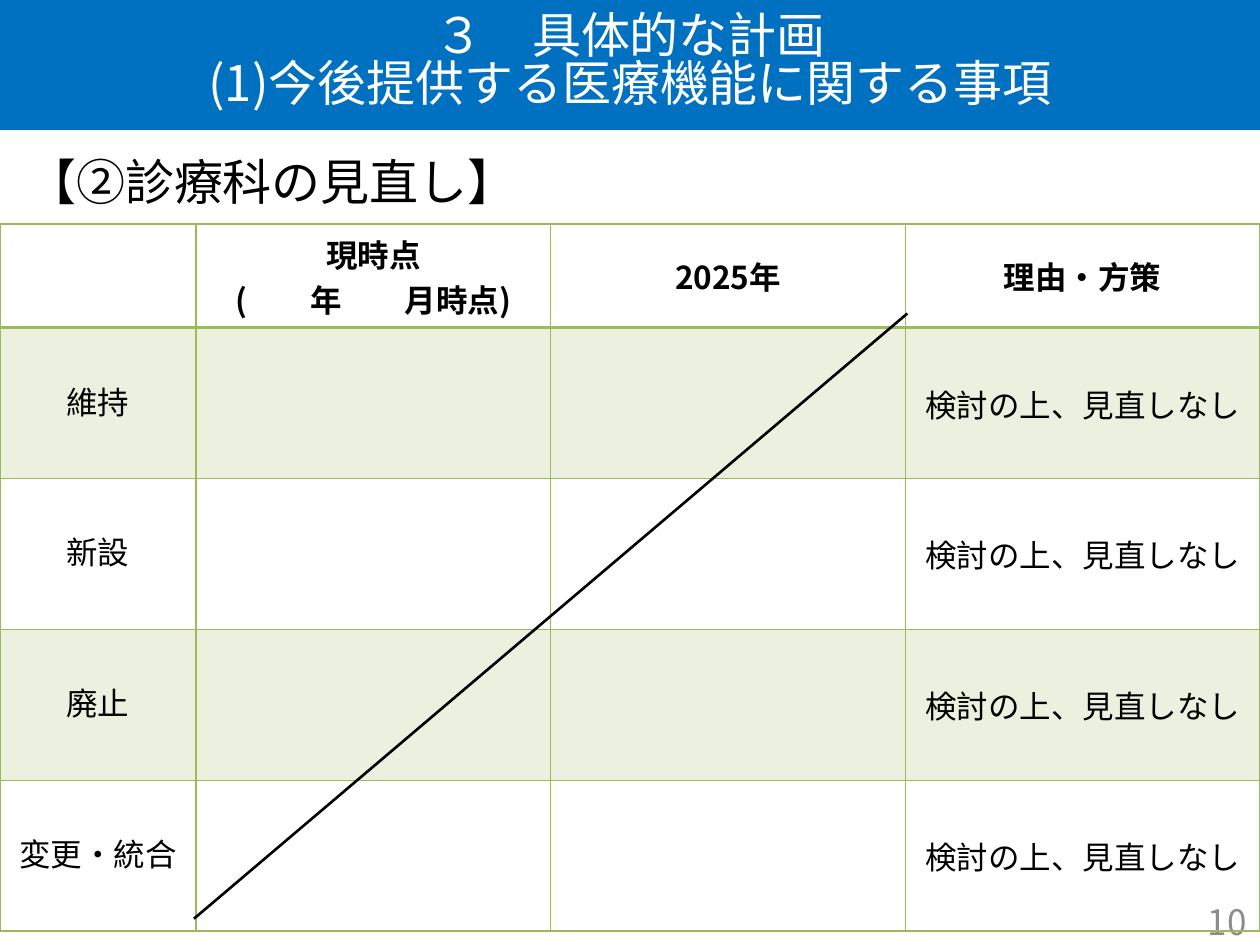
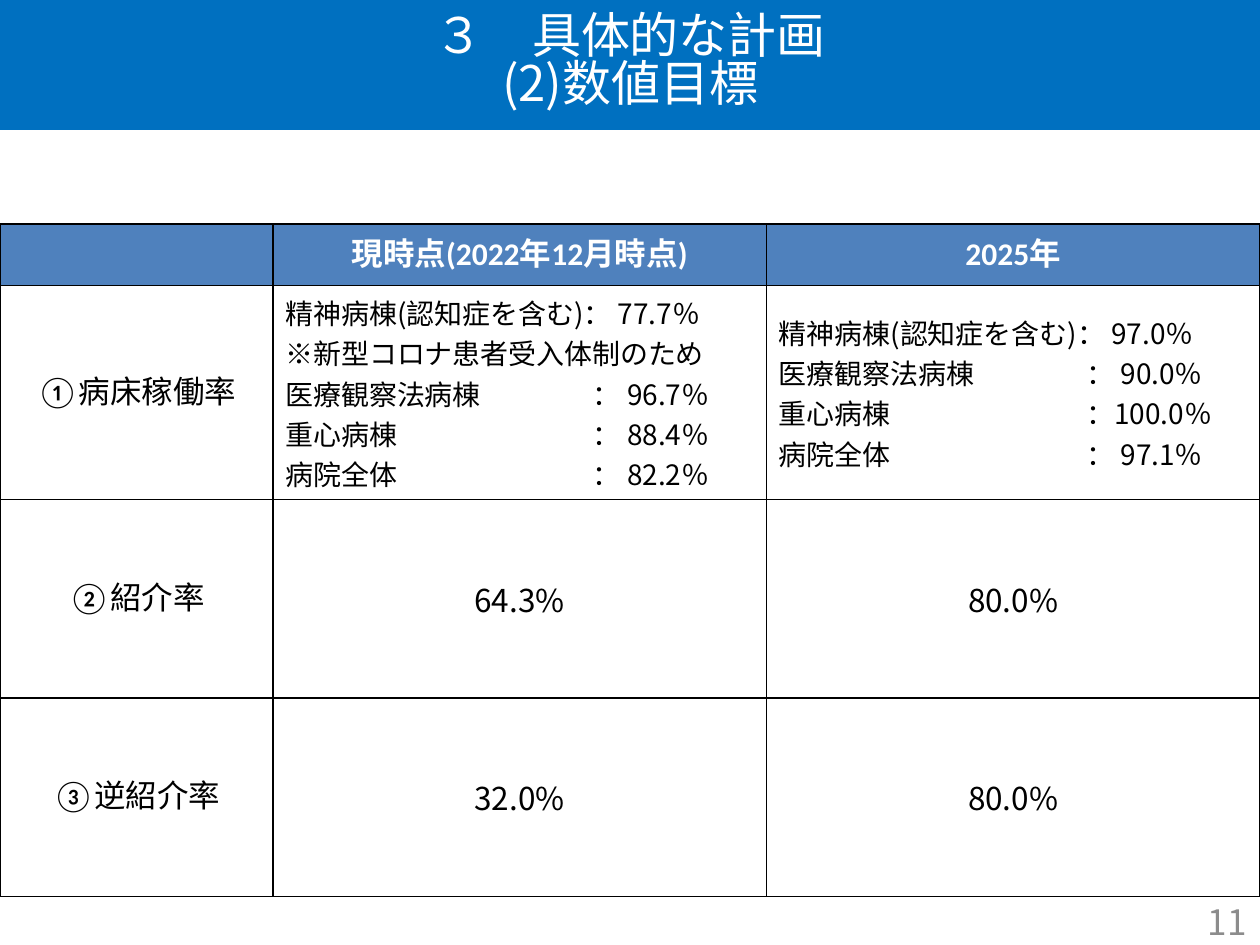
"""Build two hospital planning slides with a shared title band, tables and page numbers."""
import dataclasses

import pptx
import pptx.dml.color
import pptx.enum.shapes
import pptx.enum.text
import pptx.oxml.ns
import pptx.util
from lxml import etree

Cm = pptx.util.Cm
Pt = pptx.util.Pt
Align = pptx.enum.text.PP_ALIGN
MIDDLE = pptx.enum.text.MSO_ANCHOR.MIDDLE
qn = pptx.oxml.ns.qn


@dataclasses.dataclass(frozen=True)
class Theme:
    band: str = "0070C0"
    header: str = "4F81BD"
    green: str = "9BBB59"
    pale_green: str = "EBF1DE"
    black: str = "000000"
    white: str = "FFFFFF"
    grey: str = "8C8C8C"
    heading_size: int = 28
    number_size: int = 20
    body_size: int = 18
    detail_size: int = 16
    main_font: str = "Noto Sans CJK JP"
    label_font: str = "Calibri"
    page_width: float = 25.4
    page_height: float = 19.05
    table_top: float = 4.52
    tab_stop: float = 6.2


THEME = Theme()


def rgb(colour):
    return pptx.dml.color.RGBColor.from_string(colour)


def write(frame, text, size=THEME.body_size, colour=THEME.black, font=THEME.main_font,
          bold=False, align=Align.LEFT, spacing=None):
    for index, line in enumerate(text.split("\n")):
        para = frame.add_paragraph() if index else frame.paragraphs[0]
        para.text = line
        para.alignment = align
        if spacing:
            para.line_spacing = spacing
        if "\t" in line:
            stops = etree.SubElement(para._p.get_or_add_pPr(), qn("a:tabLst"))
            etree.SubElement(stops, qn("a:tab"), pos=str(Cm(THEME.tab_stop)), algn="l")
        for span in para.runs:
            span.font.size = Pt(size)
            span.font.bold = bold
            span.font.color.rgb = rgb(colour)
            span.font.name = font
            etree.SubElement(span._r.get_or_add_rPr(), qn("a:ea"), typeface=font)


def set_borders(cell, colour, bottom=1, top=1):
    properties = cell._tc.get_or_add_tcPr()
    widths = {"lnL": 1, "lnR": 1, "lnT": top, "lnB": bottom}
    for index, (side, width) in enumerate(widths.items()):
        border = etree.Element(qn(f"a:{side}"), w=str(Pt(width)))
        fill = etree.SubElement(border, qn("a:solidFill"))
        etree.SubElement(fill, qn("a:srgbClr"), val=colour)
        properties.insert(index, border)


class Builder:
    def __init__(self, theme):
        self.theme = theme
        self.deck = pptx.Presentation()
        self.deck.slide_width = Cm(theme.page_width)
        self.deck.slide_height = Cm(theme.page_height)
        self.page = None

    def add_page(self, title, number):
        self.page = self.deck.slides.add_slide(self.deck.slide_layouts[6])
        self.band(title)
        self.text_box(number, 19.46, 18.06, 5.92, 1.02, size=self.theme.number_size,
                      colour=self.theme.grey, align=Align.RIGHT)

    def band(self, title):
        box = self.page.shapes.add_shape(
            pptx.enum.shapes.MSO_SHAPE.RECTANGLE, 0, Cm(-0.08), Cm(self.theme.page_width), Cm(2.7))
        box.shadow.inherit = False
        box.fill.solid()
        box.fill.fore_color.rgb = rgb(self.theme.band)
        box.line.fill.background()
        box.text_frame.word_wrap = True
        box.text_frame.vertical_anchor = MIDDLE
        write(box.text_frame, title, size=self.theme.heading_size, colour=self.theme.white,
              align=Align.CENTER, spacing=0.82)

    def text_box(self, text, left, top, width, height, **style):
        box = self.page.shapes.add_textbox(Cm(left), Cm(top), Cm(width), Cm(height))
        box.text_frame.word_wrap = True
        box.text_frame.vertical_anchor = MIDDLE
        write(box.text_frame, text, **style)

    def line(self, start, end, colour, width):
        line = self.page.shapes.add_connector(
            pptx.enum.shapes.MSO_CONNECTOR.STRAIGHT, *map(Cm, start + end))
        line.line.color.rgb = rgb(colour)
        line.line.width = Pt(width)
        etree.SubElement(line._element.spPr, qn("a:effectLst"))

    def table(self, rows, widths, heights, border, header_style, header_fill=None,
              band_fill=None, header_rule=1):
        table = self.page.shapes.add_table(
            len(rows), len(widths), 0, Cm(self.theme.table_top),
            Cm(sum(widths)), Cm(sum(heights))).table
        table.first_row = table.horz_banding = False
        for column, width in zip(table.columns, widths):
            column.width = Cm(width)
        for index, (texts, height) in enumerate(zip(rows, heights)):
            table.rows[index].height = Cm(height)
            fill = header_fill if index == 0 else band_fill if index % 2 else None
            for column, text in enumerate(texts):
                cell = table.cell(index, column)
                cell.vertical_anchor = MIDDLE
                if fill:
                    cell.fill.solid()
                    cell.fill.fore_color.rgb = rgb(fill)
                else:
                    cell.fill.background()
                set_borders(cell, border, bottom=header_rule if index == 0 else 1,
                            top=header_rule if index == 1 else 1)
                write(cell.text_frame, text, **self.cell_style(index, column, text, header_style))

    def cell_style(self, row, column, text, header_style):
        if row == 0:
            return {"bold": True, "align": Align.CENTER, **header_style}
        if column == 0:
            return {"font": self.theme.label_font, "align": Align.CENTER}
        if "\n" in text:
            return {"size": self.theme.detail_size}
        return {"align": Align.CENTER}


def add_department_review(builder):
    theme = builder.theme
    builder.add_page("３　具体的な計画\v(1)今後提供する医療機能に関する事項", "10")
    header = ["", "現時点\n(　　年　　月時点)", "2025年", "理由・方策"]
    reviews = [[review, "", "", "検討の上、見直しなし"]
               for review in ("維持", "新設", "廃止", "変更・統合")]
    builder.table([header] + reviews, [3.95] + [7.15] * 3, [2.09] + [3.04] * 4, theme.green,
                  header_style={}, band_fill=theme.pale_green, header_rule=2)
    builder.text_box("【②診療科の見直し】", 0.3, 2.92, 24.8, 1.45, size=theme.heading_size)
    builder.line((18.29, 6.32), (3.91, 18.52), theme.black, 1.5)


def add_numeric_targets(builder):
    theme = builder.theme
    builder.add_page("３　具体的な計画\v(2)数値目標", "11")
    current = ("精神病棟(認知症を含む)： 77.7％\n※新型コロナ患者受入体制のため\n"
               "医療観察法病棟\t： 96.7％\n重心病棟\t： 88.4％\n病院全体\t： 82.2％")
    target = ("精神病棟(認知症を含む)： 97.0％\n医療観察法病棟\t： 90.0％\n"
              "重心病棟\t：100.0％\n病院全体\t： 97.1％")
    rows = [["", "現時点(2022年12月時点)", "2025年"],
            ["①病床稼働率", current, target],
            ["②紹介率", "64.3%", "80.0%"],
            ["③逆紹介率", "32.0%", "80.0%"]]
    builder.table(rows, [5.5, 9.95, 9.95], [1.24, 4.31, 4, 4], theme.black,
                  header_style={"font": theme.label_font, "colour": theme.white},
                  header_fill=theme.header)


def main():
    builder = Builder(THEME)
    add_department_review(builder)
    add_numeric_targets(builder)
    builder.deck.save("out.pptx")


if __name__ == "__main__":
    main()
